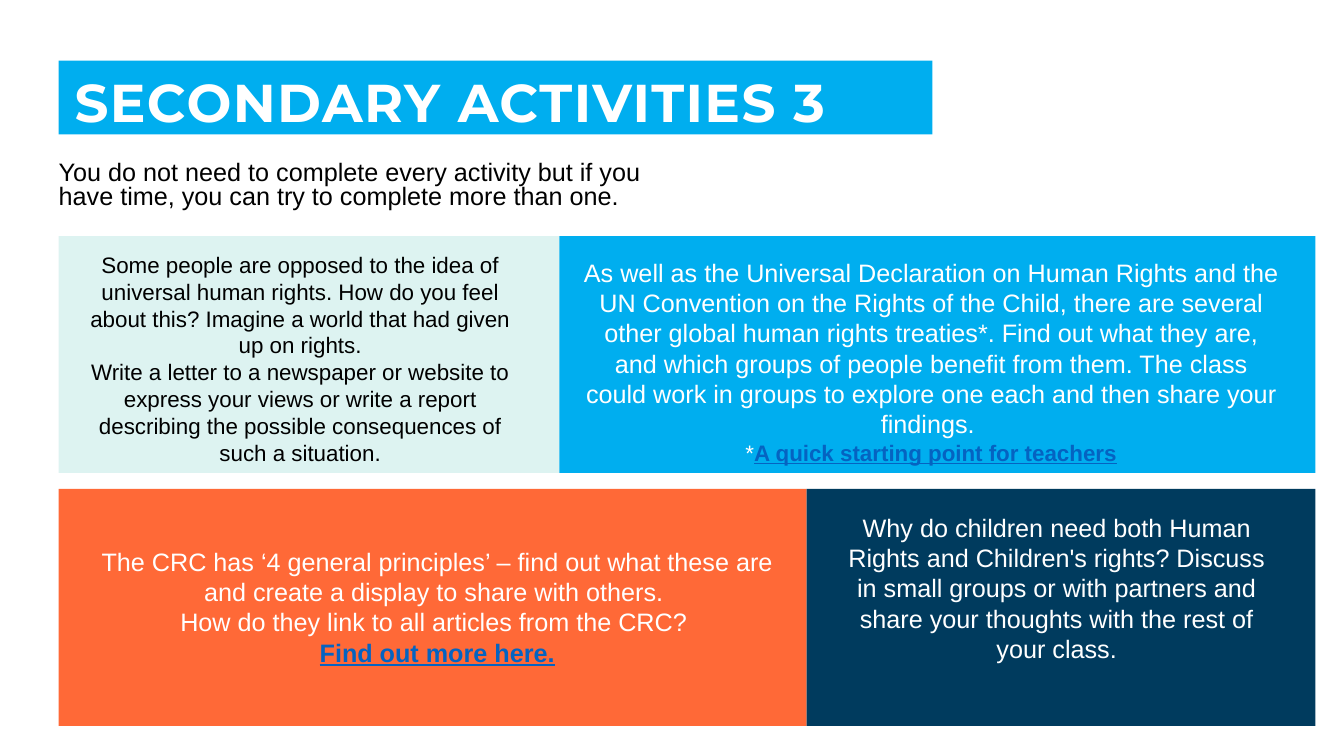
from dataclasses import dataclass

from pptx import Presentation
from pptx.dml.color import RGBColor
from pptx.enum.shapes import MSO_SHAPE
from pptx.enum.text import MSO_ANCHOR, PP_ALIGN
from pptx.util import Cm, Pt


@dataclass(frozen=True)
class Theme:
    """Colours, fonts and type sizes of the slide."""
    sky: str = "00AEEF"
    mint: str = "DDF3F1"
    orange: str = "FF6937"
    navy: str = "003B5E"
    white: str = "FFFFFF"
    black: str = "000000"
    link: str = "0563C1"
    heading_font: str = "Montserrat"
    body_font: str = "Arial"
    heading: int = 38
    body: int = 18
    small: int = 16


THEME = Theme()


def add_run(p, text, size, color, font=THEME.body_font, bold=False, underline=False):
    """Add one formatted run to a paragraph."""
    r = p.add_run()
    r.text = text
    r.font.size = Pt(size)
    r.font.name = font
    r.font.bold = bold
    r.font.underline = underline
    r.font.color.rgb = RGBColor.from_string(color)
    return r


def add_rect(s, box, color):
    """Draw a plain filled rectangle."""
    sp = s.shapes.add_shape(MSO_SHAPE.RECTANGLE, *map(Cm, box))
    sp.shadow.inherit = False
    sp.fill.solid()
    sp.fill.fore_color.rgb = RGBColor.from_string(color)
    sp.line.fill.background()
    return sp


def add_text_frame(s, box):
    """Add a wrapping text box and return its frame."""
    tf = s.shapes.add_textbox(*map(Cm, box)).text_frame
    tf.word_wrap = True
    return tf


def add_title(s, box, text):
    """Draw the title bar."""
    tf = add_rect(s, box, THEME.sky).text_frame
    tf.word_wrap = True
    tf.vertical_anchor = MSO_ANCHOR.MIDDLE
    tf.margin_left, tf.margin_top = Cm(0.4), Cm(0.4)
    tf.margin_right, tf.margin_bottom = Cm(0.3), 0
    p = tf.paragraphs[0]
    p.alignment = PP_ALIGN.LEFT
    p.line_spacing = 0.9
    r = add_run(p, text, THEME.heading, THEME.white, THEME.heading_font, bold=True)
    r._r.get_or_add_rPr().set("spc", "100")


def add_intro(s, box, text):
    """Place the introduction under the title."""
    tf = add_text_frame(s, box)
    tf.margin_left = 0
    p = tf.paragraphs[0]
    p.line_spacing = 0.8
    add_run(p, text, THEME.body, THEME.black)


def add_panel(s, box, fill, inner, paragraphs):
    """Draw an activity panel with its centred text at an inner offset."""
    left, top, _, _ = box
    dx, dy, width, height = inner
    add_rect(s, box, fill)
    tf = add_text_frame(s, (left + dx, top + dy, width, height))
    for i, runs in enumerate(paragraphs):
        p = tf.paragraphs[0] if i == 0 else tf.add_paragraph()
        p.alignment = PP_ALIGN.CENTER
        for text, size, color in runs:
            is_link = color == THEME.link
            add_run(p, text, size, color, bold=is_link, underline=is_link)


def add_activities(s, box):
    """Lay out two rows of two activity panels."""
    left, top, width, height = box
    gap = 0.4
    row = (height - gap) / 2
    lower = top + row + gap
    views, principles = 12.62, 18.85
    t = THEME
    add_panel(s, (left, top, views, row), t.mint, (0.41, 0.25, 11.35, 5.74), [
        [("Some people are opposed to the idea of universal human rights. "
          "How do you feel about this? Imagine a world that had given up on rights.",
          t.small, t.black)],
        [("Write a letter to a newspaper or website to express your views or write "
          "a report describing the possible consequences of such a situation.",
          t.small, t.black)],
    ])
    add_panel(s, (left + views, top, width - views, row), t.sky, (0.33, 0.41, 18.08, 5.56), [
        [("As well as the Universal Declaration on Human Rights and the UN Convention "
          "on the Rights of the Child, there are several other global human rights "
          "treaties*. Find out what they are, and which groups of people benefit from "
          "them. The class could work in groups to explore one each and then share "
          "your findings. ", t.body, t.white)],
        [("*", t.small, t.white),
         ("A quick starting point for teachers", t.small, t.link)],
    ])
    add_panel(s, (left, lower, principles, row), t.orange, (0.41, 1.32, 18.26, 3.33), [
        [("The CRC has ‘4 general principles’ – find out what these are and create "
          "a display to share with others. ", t.body, t.white)],
        [("How do they link to all articles from the CRC? ", t.body, t.white)],
        [("Find out more here.", t.body, t.link)],
    ])
    add_panel(s, (left + principles, lower, width - principles, row), t.navy,
              (0.51, 0.46, 11.58, 4.11), [
        [("Why do children need both Human Rights and Children's rights? Discuss in "
          "small groups or with partners and share your thoughts with the rest of "
          "your class.", t.body, t.white)],
    ])


def main():
    """Build and save the slide."""
    prs = Presentation()
    prs.slide_width, prs.slide_height = Cm(33.87), Cm(19.05)
    s = prs.slides.add_slide(prs.slide_layouts[6])
    left = 1.48
    add_title(s, (left, 1.53, 22.02, 1.86), "SECONDARY ACTIVITIES 3")
    add_intro(s, (left, 3.96, 15.77, 1.57),
              "You do not need to complete every activity but if you have time, "
              "you can try to complete more than one.")
    add_activities(s, (left, 5.95, 31.67, 12.34))
    prs.save("out.pptx")


if __name__ == "__main__":
    main()
